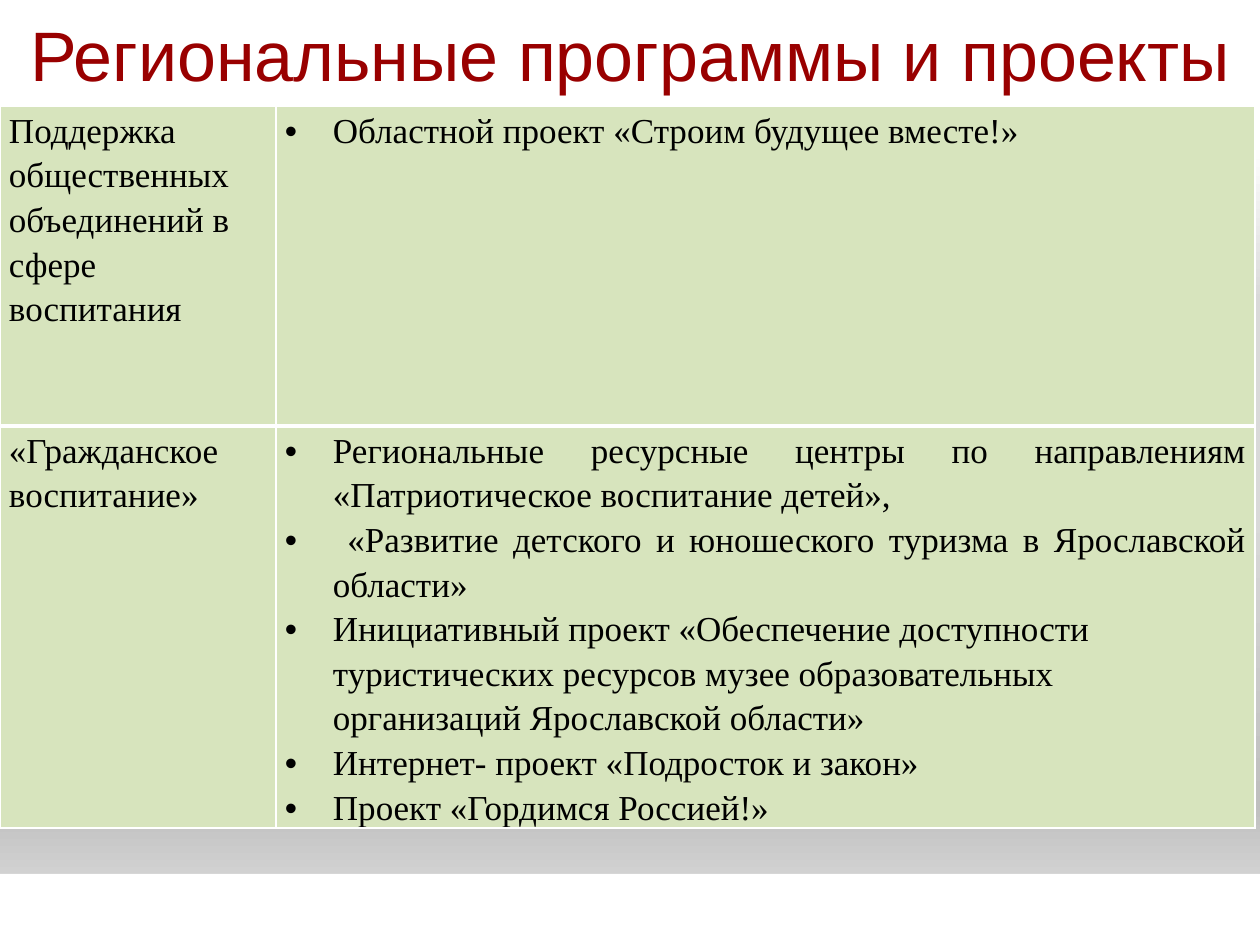
from dataclasses import dataclass

from lxml.etree import SubElement
from pptx import Presentation
from pptx.dml.color import RGBColor
from pptx.enum.shapes import MSO_SHAPE
from pptx.enum.text import MSO_ANCHOR, MSO_AUTO_SIZE, PP_ALIGN
from pptx.oxml.ns import qn
from pptx.util import Emu, Pt

PX_PER_INCH = 126
COLORS = {
    "white": "FFFFFF",
    "light": "D9D9D9",
    "gray": "BFBFBF",
    "pale": "E6E6E6",
    "title": "990000",
    "cell": "D7E4BD",
    "text": "000000",
}
BACKGROUND_STOPS = [
    (0, "white"), (15, "white"), (32, "light"),
    (54, "light"), (85, "gray"), (100, "pale"),
]
COLUMN_WIDTHS = [276, 979]
ROW_HEIGHTS = [320, 388]
TABLE_HEIGHT = 755
TITLE_HEIGHT = 106
CELL_INSET = 9
BULLET_INDENT = 48


@dataclass
class Item:
    text: str
    bullet: bool = True
    justified: bool = False


PROGRAMS = [
    [
        [Item("Поддержка общественных объединений в сфере воспитания", bullet=False)],
        [Item("Областной проект «Строим будущее вместе!»")],
    ],
    [
        [Item("«Гражданское воспитание»", bullet=False)],
        [
            Item("Региональные ресурсные центры по направлениям "
                 "«Патриотическое воспитание детей»,", justified=True),
            Item(" «Развитие детского и юношеского туризма в Ярославской области»",
                 justified=True),
            Item("Инициативный проект «Обеспечение доступности туристических ресурсов "
                 "музее образовательных организаций Ярославской области»"),
            Item("Интернет- проект «Подросток и закон»"),
            Item("Проект «Гордимся Россией!»"),
        ],
    ],
]


def px(length: int) -> Emu:
    return Emu(round(length * 914400 / PX_PER_INCH))


def color(name: str) -> RGBColor:
    return RGBColor.from_string(COLORS[name])


def add_color(parent, name: str) -> None:
    SubElement(parent, qn("a:srgbClr"), val=COLORS[name])


def add_line(parent, tag: str, points: float, name: str) -> None:
    line = SubElement(parent, qn(tag), w=str(Pt(points)))
    add_color(SubElement(line, qn("a:solidFill")), name)


def add_span(para, text: str, font: str, size: int, name: str):
    span = para.add_run()
    span.text = text
    span.font.name = font
    span.font.size = Pt(size)
    span.font.bold = False
    span.font.color.rgb = color(name)
    return span


def paint_background(page) -> None:
    fill = page.background.fill
    fill.gradient()
    fill.gradient_angle = 270
    stops = page.element.find(f".//{qn('a:gsLst')}")
    for stop in list(stops):
        stops.remove(stop)
    for percent, name in BACKGROUND_STOPS:
        add_color(SubElement(stops, qn("a:gs"), pos=str(percent * 1000)), name)


def add_footer_band(page) -> None:
    band = page.shapes.add_shape(MSO_SHAPE.RECTANGLE, px(0), px(874), px(1261), px(73))
    band.shadow.inherit = False
    band.fill.solid()
    band.fill.fore_color.rgb = color("white")
    band.line.fill.background()


def write_title(page, text: str) -> None:
    title = page.shapes.title
    title.left, title.top = px(0), px(0)
    title.width, title.height = px(1260), px(TITLE_HEIGHT)
    title.fill.solid()
    title.fill.fore_color.rgb = color("white")
    frame = title.text_frame
    frame.word_wrap = True
    frame.auto_size = MSO_AUTO_SIZE.NONE
    frame.vertical_anchor = MSO_ANCHOR.MIDDLE
    para = frame.paragraphs[0]
    para.alignment = PP_ALIGN.CENTER
    span = add_span(para, text, "Arial", 40, "title")
    properties = span.font._element
    add_line(properties, "a:ln", 0.75, "title")
    properties.insert(0, properties[-1])


def write_item(para, item: Item) -> None:
    para.alignment = PP_ALIGN.JUSTIFY if item.justified else PP_ALIGN.LEFT
    para.line_spacing = 1.15
    if item.bullet:
        properties = para._p.get_or_add_pPr()
        properties.set("marL", str(px(BULLET_INDENT)))
        properties.set("indent", str(-px(BULLET_INDENT)))
        SubElement(properties, qn("a:buFont"), typeface="Arial")
        SubElement(properties, qn("a:buChar"), char="•")
    add_span(para, item.text, "Times New Roman", 20, "text")


def fill_cell(cell, items: list[Item], top: int, bottom: int) -> None:
    cell.margin_left = cell.margin_right = px(CELL_INSET)
    cell.margin_top = cell.margin_bottom = px(0)
    cell.vertical_anchor = MSO_ANCHOR.TOP
    properties = cell._tc.get_or_add_tcPr()
    for side, points in {"L": 1, "R": 1, "T": top, "B": bottom}.items():
        add_line(properties, f"a:ln{side}", points, "white")
    cell.fill.solid()
    cell.fill.fore_color.rgb = color("cell")
    frame = cell.text_frame
    for index, item in enumerate(items):
        write_item(frame.add_paragraph() if index else frame.paragraphs[0], item)


def add_programs(page) -> None:
    holder = page.shapes.add_table(
        len(ROW_HEIGHTS), len(COLUMN_WIDTHS), px(0), px(TITLE_HEIGHT),
        px(sum(COLUMN_WIDTHS)), px(TABLE_HEIGHT))
    table = holder.table
    for column, width in zip(table.columns, COLUMN_WIDTHS):
        column.width = px(width)
    for row, height in zip(table.rows, ROW_HEIGHTS):
        row.height = px(height)
    holder.height = px(TABLE_HEIGHT)
    for row_index, row in enumerate(PROGRAMS):
        top, bottom = (3, 1) if row_index else (1, 3)
        for column_index, items in enumerate(row):
            fill_cell(table.cell(row_index, column_index), items, top, bottom)


def main() -> None:
    deck = Presentation()
    deck.slide_width, deck.slide_height = px(1260), px(945)
    page = deck.slides.add_slide(deck.slide_layouts[5])
    paint_background(page)
    add_footer_band(page)
    write_title(page, "Региональные программы и проекты")
    add_programs(page)
    deck.save("out.pptx")


if __name__ == "__main__":
    main()
